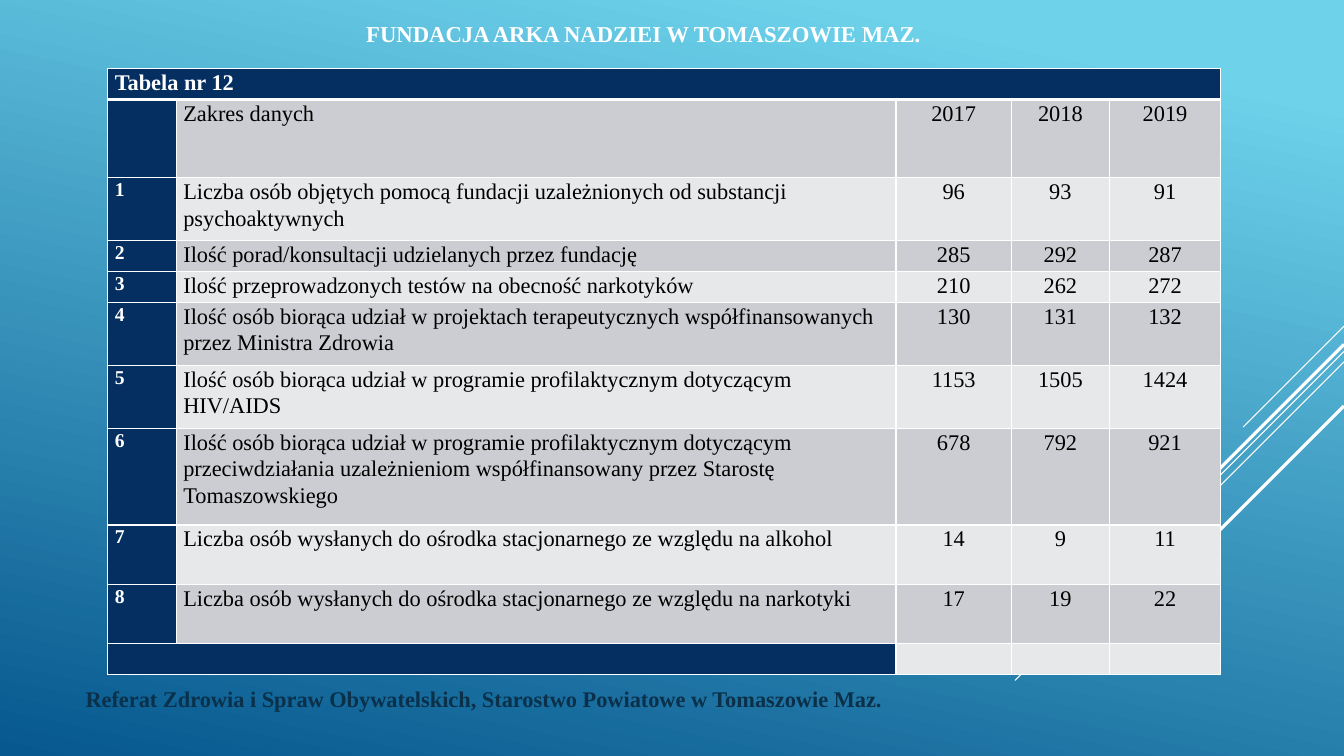
from lxml import etree
from pptx import Presentation
from pptx.dml.color import RGBColor
from pptx.enum.shapes import MSO_CONNECTOR as Connector
from pptx.enum.text import MSO_ANCHOR as Anchor, PP_ALIGN as Align
from pptx.oxml.ns import qn
from pptx.util import Pt

COLORS = {
    "sky": "6ED2EB", "sea": "06588E", "white": "FFFFFF", "black": "000000",
    "navy": "052F61", "dark_band": "CCCDD2", "light_band": "E7E8EA", "footer": "0A304A",
}
FONT = "Times New Roman"
TITLE = "FUNDACJA ARKA NADZIEI W TOMASZOWIE MAZ."
FOOTER = "Referat Zdrowia i Spraw Obywatelskich, Starostwo Powiatowe w Tomaszowie Maz."
CAPTION = "Tabela nr 12"
HEADINGS = ("Zakres danych", "2017", "2018", "2019")
RECORDS = [
    ("Liczba osób objętych pomocą fundacji uzależnionych od substancji psychoaktywnych", 96, 93, 91),
    ("Ilość porad/konsultacji udzielanych przez fundację", 285, 292, 287),
    ("Ilość przeprowadzonych testów na obecność narkotyków", 210, 262, 272),
    ("Ilość osób biorąca udział w projektach terapeutycznych współfinansowanych "
     "przez Ministra Zdrowia", 130, 131, 132),
    ("Ilość osób biorąca udział w programie profilaktycznym dotyczącym HIV/AIDS", 1153, 1505, 1424),
    ("Ilość osób biorąca udział w programie profilaktycznym dotyczącym przeciwdziałania "
     "uzależnieniom współfinansowany przez Starostę Tomaszowskiego", 678, 792, 921),
    ("Liczba osób wysłanych do ośrodka stacjonarnego ze względu na alkohol", 14, 9, 11),
    ("Liczba osób wysłanych do ośrodka stacjonarnego ze względu na narkotyki", 17, 19, 22),
]
COLUMN_WIDTHS = (49, 514, 82.5, 70, 79.5)
ROW_HEIGHTS = (22, 56, 45, 22, 22, 45, 45, 69, 42.5, 42.5, 22)
TABLE_LEFT, TABLE_TOP = 77, 49
PAGE_WIDTH, PAGE_HEIGHT = 960, 540
RAYS = [(233, 72, 0.75), (251, 235, 0.75), (258.5, 149, 0.75), (246, 137.5, 2.25), (290, 100, 2.25)]


def color(name):
    return RGBColor.from_string(COLORS[name])


def style(para, size, ink, bold, align=Align.LEFT):
    para.alignment = align
    font = para.font
    font.name, font.size, font.bold = FONT, Pt(size), bold
    font.color.rgb = color(ink)


def paint_background(page):
    fill = page.background.fill
    fill.gradient()
    fill.gradient_angle = 258
    for stop, name, position in zip(fill.gradient_stops, ("sky", "sea"), (0.1, 1)):
        stop.color.rgb = color(name)
        stop.position = position


def add_rays(page):
    for top, run, width in RAYS:
        ray = page.shapes.add_connector(
            Connector.STRAIGHT, Pt(PAGE_WIDTH), Pt(top), Pt(PAGE_WIDTH - run), Pt(top + run))
        ray.line.color.rgb = color("white")
        ray.line.width = Pt(width)
        etree.SubElement(ray._element.spPr, qn("a:effectLst"))


def add_label(page, text, place, size, ink, align, inset):
    box = page.shapes.add_textbox(*map(Pt, place))
    frame = box.text_frame
    frame.word_wrap = True
    frame.margin_top = frame.margin_bottom = Pt(inset)
    frame.text = text
    style(frame.paragraphs[0], size, ink, True, align)


def add_borders(cell, top, bottom):
    properties = cell._tc.get_or_add_tcPr()
    for side, width in (("L", 1), ("R", 1), ("T", top), ("B", bottom)):
        line = etree.SubElement(properties, qn(f"a:ln{side}"), w=str(Pt(width)))
        fill = etree.SubElement(line, qn("a:solidFill"))
        etree.SubElement(fill, qn("a:srgbClr"), val=COLORS["white"])


def fill_cell(cell, text, row, column):
    add_borders(cell, 3 if row == 1 else 1, 3 if row == 0 else 1)
    last = len(ROW_HEIGHTS) - 1
    side = row == 0 or column == 0 or (row == last and column == 1)
    band = "dark_band" if row % 2 else "light_band"
    cell.fill.solid()
    cell.fill.fore_color.rgb = color("navy" if side else band)
    cell.margin_left = cell.margin_right = Pt(5)
    cell.margin_top = cell.margin_bottom = 0
    cell.vertical_anchor = Anchor.TOP
    cell.text = text
    para = cell.text_frame.paragraphs[0]
    if text:
        para.line_spacing = 1.07
        para.space_after = Pt(8)
    style(para, 14 if column == 0 and row else 16, "white" if side else "black", side,
          Align.CENTER if column > 1 else Align.LEFT)


def add_data_table(page):
    rows = [(CAPTION, "", "", "", ""), ("", *HEADINGS)]
    rows += [(number, *record) for number, record in enumerate(RECORDS, 1)]
    rows.append(("",) * len(COLUMN_WIDTHS))
    table = page.shapes.add_table(
        len(rows), len(COLUMN_WIDTHS), Pt(TABLE_LEFT), Pt(TABLE_TOP),
        Pt(sum(COLUMN_WIDTHS)), Pt(sum(ROW_HEIGHTS))).table
    table.first_row = table.horz_banding = False
    for column, width in zip(table.columns, COLUMN_WIDTHS):
        column.width = Pt(width)
    for row, height in zip(table.rows, ROW_HEIGHTS):
        row.height = Pt(height)
    for i, values in enumerate(rows):
        for j, value in enumerate(values):
            fill_cell(table.cell(i, j), str(value), i, j)
    table.cell(0, 0).merge(table.cell(0, len(COLUMN_WIDTHS) - 1))
    table.cell(len(rows) - 1, 0).merge(table.cell(len(rows) - 1, 1))


def main():
    """Build the slide with the foundation's yearly figures."""
    deck = Presentation()
    deck.slide_width, deck.slide_height = Pt(PAGE_WIDTH), Pt(PAGE_HEIGHT)
    page = deck.slides.add_slide(deck.slide_layouts[6])
    paint_background(page)
    add_rays(page)
    add_label(page, TITLE, (90, 14, 739, 30), 16.2, "white", Align.CENTER, 0)
    add_label(page, FOOTER, (54, 486, 594, 29), 16, "footer", Align.LEFT, 3.6)
    add_data_table(page)
    deck.save("out.pptx")


if __name__ == "__main__":
    main()
